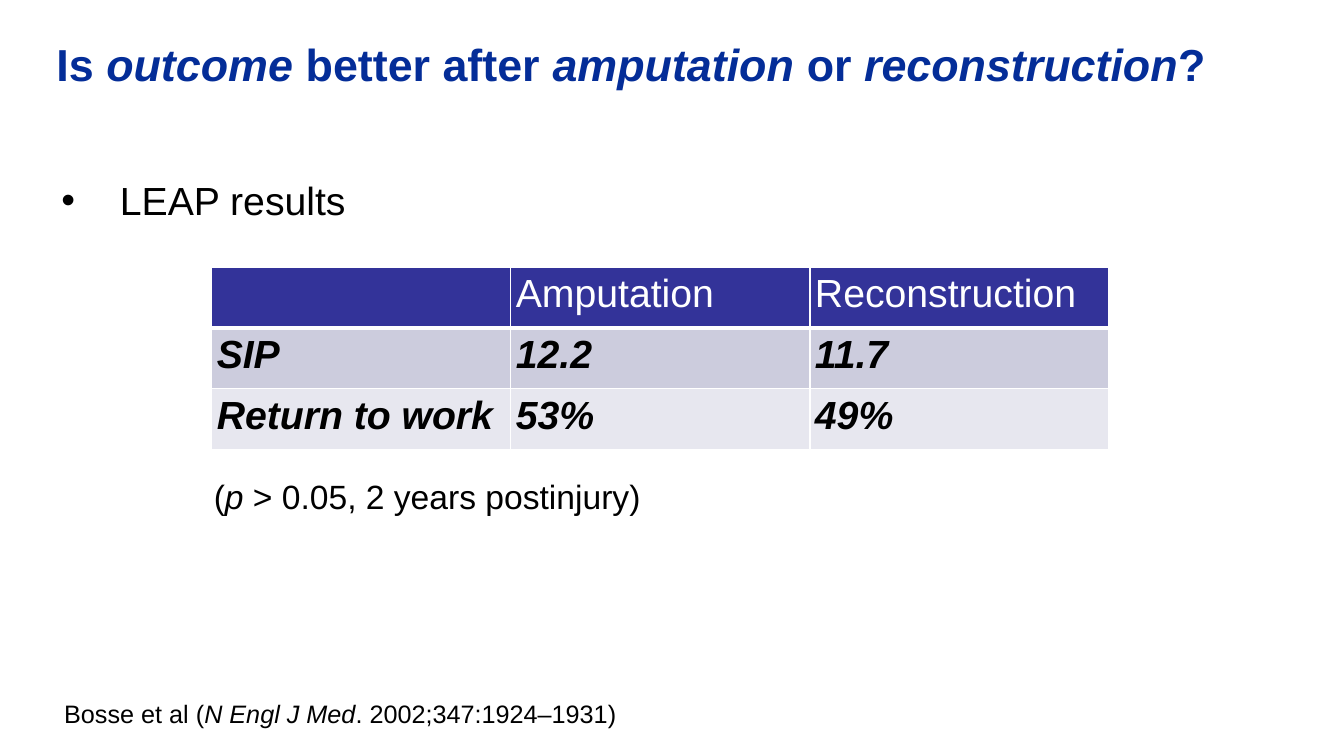
from lxml import etree
from pptx import Presentation
from pptx.dml.color import RGBColor
from pptx.enum.text import MSO_ANCHOR, PP_ALIGN
from pptx.oxml.ns import qn
from pptx.util import Inches, Pt

FONT = "Arial"
BLACK = RGBColor(0x00, 0x00, 0x00)
WHITE = RGBColor(0xFF, 0xFF, 0xFF)
TITLE_BLUE = RGBColor(0x04, 0x2D, 0x98)
HEADER_BLUE = RGBColor(0x33, 0x33, 0x99)
ROW_FILLS = [HEADER_BLUE, RGBColor(0xCC, 0xCC, 0xDD), RGBColor(0xE7, 0xE7, 0xEF)]
PADDING = Inches(0.05)

RESULTS = [
    ["", "Amputation", "Reconstruction"],
    ["SIP", "12.2", "11.7"],
    ["Return to work", "53%", "49%"],
]


def set_font(para, size, color, bold=False):
    font = para.font
    font.name, font.size, font.bold = FONT, Pt(size), bold
    font.color.rgb = color


def add_text(slide, place, pieces, size, color=BLACK, bold=False,
             padding=PADDING, wrap=True, bullet_indent=None):
    """Add a one-paragraph box; every second piece of text is italic."""
    box = slide.shapes.add_textbox(*map(Inches, place))
    frame = box.text_frame
    frame.word_wrap = wrap
    frame.vertical_anchor = MSO_ANCHOR.TOP
    frame.margin_left = frame.margin_right = padding
    frame.margin_top = frame.margin_bottom = padding
    para = frame.paragraphs[0]
    if bullet_indent:
        add_bullet(para, bullet_indent)
    set_font(para, size, color, bold)
    for index, piece in enumerate(pieces):
        span = para.add_run()
        span.text = piece
        if index % 2:
            span.font.italic = True
    return para


def add_bullet(para, indent):
    properties = para._p.get_or_add_pPr()
    properties.set("marL", str(indent))
    properties.set("indent", str(-indent))
    etree.SubElement(properties, qn("a:buFont"), typeface=FONT)
    etree.SubElement(properties, qn("a:buChar"), char="•")


def set_borders(cell, top, bottom):
    """Draw white cell borders; top and bottom are widths in points."""
    properties = cell._tc.get_or_add_tcPr()
    widths = {"a:lnL": 1, "a:lnR": 1, "a:lnT": top, "a:lnB": bottom}
    for position, (tag, width) in enumerate(widths.items()):
        line = etree.Element(qn(tag), w=str(Pt(width)))
        fill = etree.SubElement(line, qn("a:solidFill"))
        etree.SubElement(fill, qn("a:srgbClr"), val=str(WHITE))
        properties.insert(position, line)


def add_results_table(slide):
    place = map(Inches, (2.1, 2.65, 8.9, 1.81))
    table = slide.shapes.add_table(len(RESULTS), len(RESULTS[0]), *place).table
    for row_index, values in enumerate(RESULTS):
        is_header = row_index == 0
        for column_index, value in enumerate(values):
            cell = table.cell(row_index, column_index)
            cell.fill.solid()
            cell.fill.fore_color.rgb = ROW_FILLS[row_index]
            cell.margin_left = cell.margin_right = PADDING
            cell.margin_top = cell.margin_bottom = PADDING
            cell.text = value
            para = cell.text_frame.paragraphs[0]
            para.alignment = PP_ALIGN.LEFT
            set_font(para, 28, WHITE if is_header else BLACK, not is_header)
            para.font.italic = not is_header
            set_borders(cell, top=3 if row_index == 1 else 1,
                        bottom=3 if is_header else 1)


def main():
    deck = Presentation()
    deck.slide_width, deck.slide_height = Inches(13.33), Inches(7.5)
    slide = deck.slides.add_slide(deck.slide_layouts[6])

    title = add_text(
        slide, (0.56, 0.42, 12.07, 1.25),
        ["Is ", "outcome", " better after ", "amputation", " or ",
         "reconstruction", "?"],
        32, TITLE_BLUE, bold=True, padding=0)
    title.line_spacing = 0.9
    add_text(slide, (0.56, 1.7, 12.07, 5.8), ["LEAP results"], 28,
             bullet_indent=Inches(0.58))
    add_results_table(slide)
    add_text(slide, (2.07, 4.67, 9.05, 0.5),
             ["(", "p", " > 0.05, 2 years postinjury)"], 24)
    citation = add_text(
        slide, (0.56, 6.88, 5.63, 0.4),
        ["Bosse et al (", "N Engl J Med", ". 2002;347:1924–1931)"], 18,
        wrap=False)
    citation.alignment = PP_ALIGN.CENTER
    deck.save("out.pptx")


if __name__ == "__main__":
    main()
